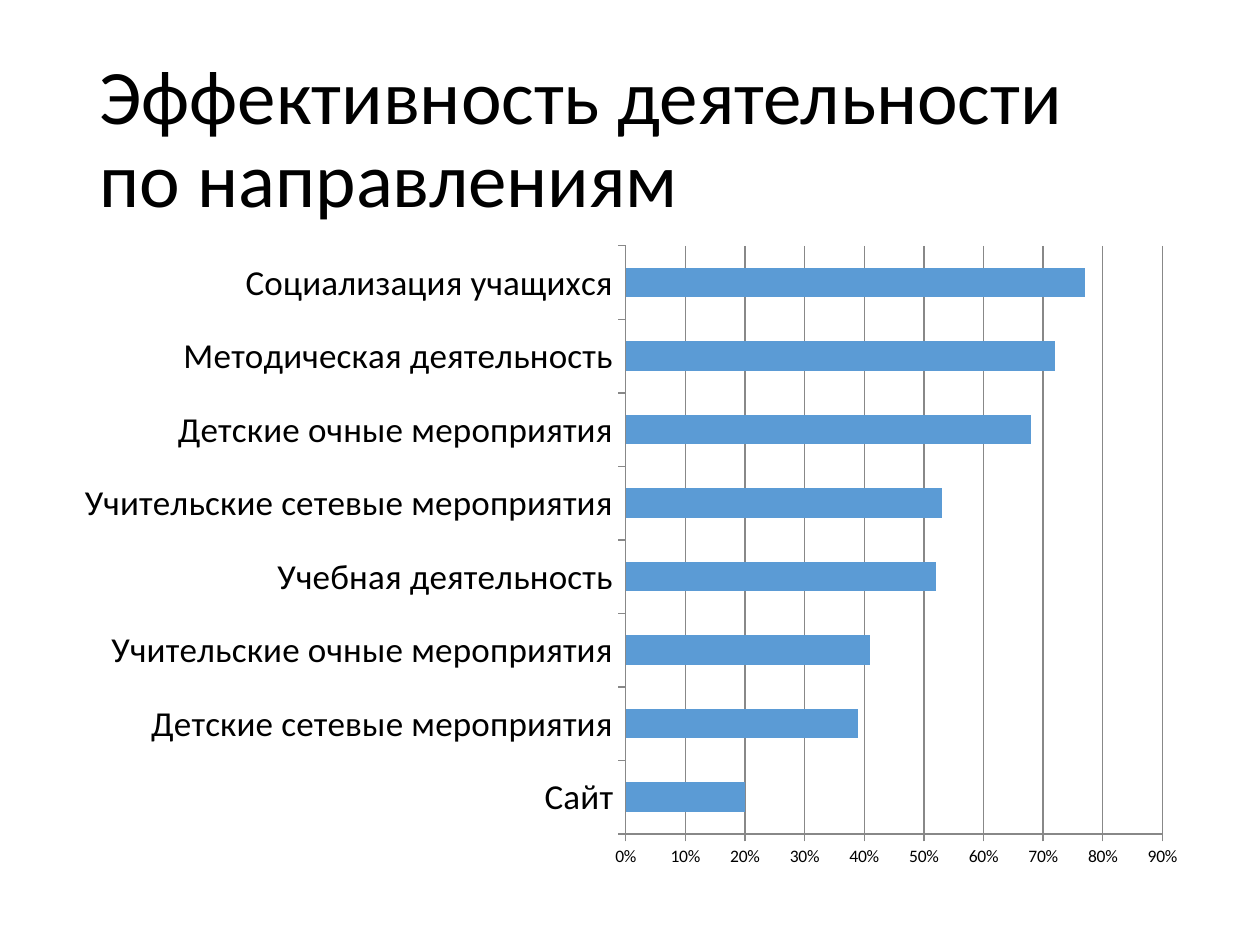
from pptx import Presentation
from pptx.chart.data import CategoryChartData
from pptx.dml.color import RGBColor
from pptx.enum.chart import XL_CHART_TYPE as ChartType, XL_TICK_MARK as Tick
from pptx.enum.text import MSO_ANCHOR as Anchor, MSO_AUTO_SIZE as AutoSize, PP_ALIGN as Align
from pptx.util import Emu, Pt

PX_PER_INCH = 126


def px(n):
    return Emu(round(n * 914400 / PX_PER_INCH))


def rgb(hex_color):
    return RGBColor.from_string(hex_color)


def format_font(font, size, color, name):
    font.size, font.name = Pt(size), name
    font.color.rgb = rgb(color)


def write(tf, text, *, size, color, font, align=Align.LEFT, anchor=Anchor.MIDDLE, spacing=1.0):
    tf.word_wrap, tf.auto_size, tf.vertical_anchor = True, AutoSize.NONE, anchor
    p = tf.paragraphs[0]
    p.alignment, p.line_spacing = align, spacing
    r = p.add_run()
    r.text = text
    format_font(r.font, size, color, font)


class Deck:
    font, ink, bar, grid = "Calibri", "000000", "5B9BD5", "888888"

    def __init__(self, width, height):
        self.prs = Presentation()
        self.prs.slide_width, self.prs.slide_height = px(width), px(height)
        self.s = self.prs.slides.add_slide(self.prs.slide_layouts[5])

    def title(self, text, x, y, w, h):
        sp = self.s.shapes.title
        sp.left, sp.top, sp.width, sp.height = map(px, (x, y, w, h))
        write(sp.text_frame, text, size=44, color=self.ink, font=self.font, spacing=0.9)

    def line(self, fmt):
        fmt.line.color.rgb = rgb(self.grid)
        fmt.line.width = Pt(0.75)

    def axis(self, axis, size):
        axis.major_tick_mark, axis.minor_tick_mark = Tick.OUTSIDE, Tick.NONE
        format_font(axis.tick_labels.font, size, self.ink, self.font)
        self.line(axis.format)

    def bar_chart(self, rows, x, y, w, h):
        data = CategoryChartData(number_format="0%")
        data.categories = [name for name, _ in rows]
        data.add_series("Series 1", [value for _, value in rows])
        chart = self.s.shapes.add_chart(
            ChartType.BAR_CLUSTERED, *map(px, (x, y, w, h)), data).chart
        chart.has_legend = chart.has_title = False
        format_font(chart.font, 10, self.ink, self.font)

        # Bars
        plot = chart.plots[0]
        plot.gap_width, plot.vary_by_categories = 150, False
        fill = plot.series[0].format.fill
        fill.solid()
        fill.fore_color.rgb = rgb(self.bar)

        # Axes and gridlines
        self.axis(chart.category_axis, 20)
        values = chart.value_axis
        self.axis(values, 10)
        values.minimum_scale, values.maximum_scale, values.major_unit = 0, 0.9, 0.1
        values.tick_labels.number_format = "0%"
        values.tick_labels.number_format_is_linked = False
        values.has_major_gridlines = True
        self.line(values.major_gridlines.format)


# Effectiveness by direction, from the bottom bar up
RESULTS = [
    ("Сайт", 0.20),
    ("Детские сетевые мероприятия", 0.39),
    ("Учительские очные мероприятия", 0.41),
    ("Учебная деятельность", 0.52),
    ("Учительские сетевые мероприятия", 0.53),
    ("Детские очные мероприятия", 0.68),
    ("Методическая деятельность", 0.72),
    ("Социализация учащихся", 0.77),
]


def main():
    deck = Deck(1260, 945)
    deck.title("Эффективность деятельности по направлениям", 87, 50, 1086, 183)
    deck.bar_chart(RESULTS, 62, 233, 1138, 646)
    deck.prs.save("out.pptx")


if __name__ == "__main__":
    main()
